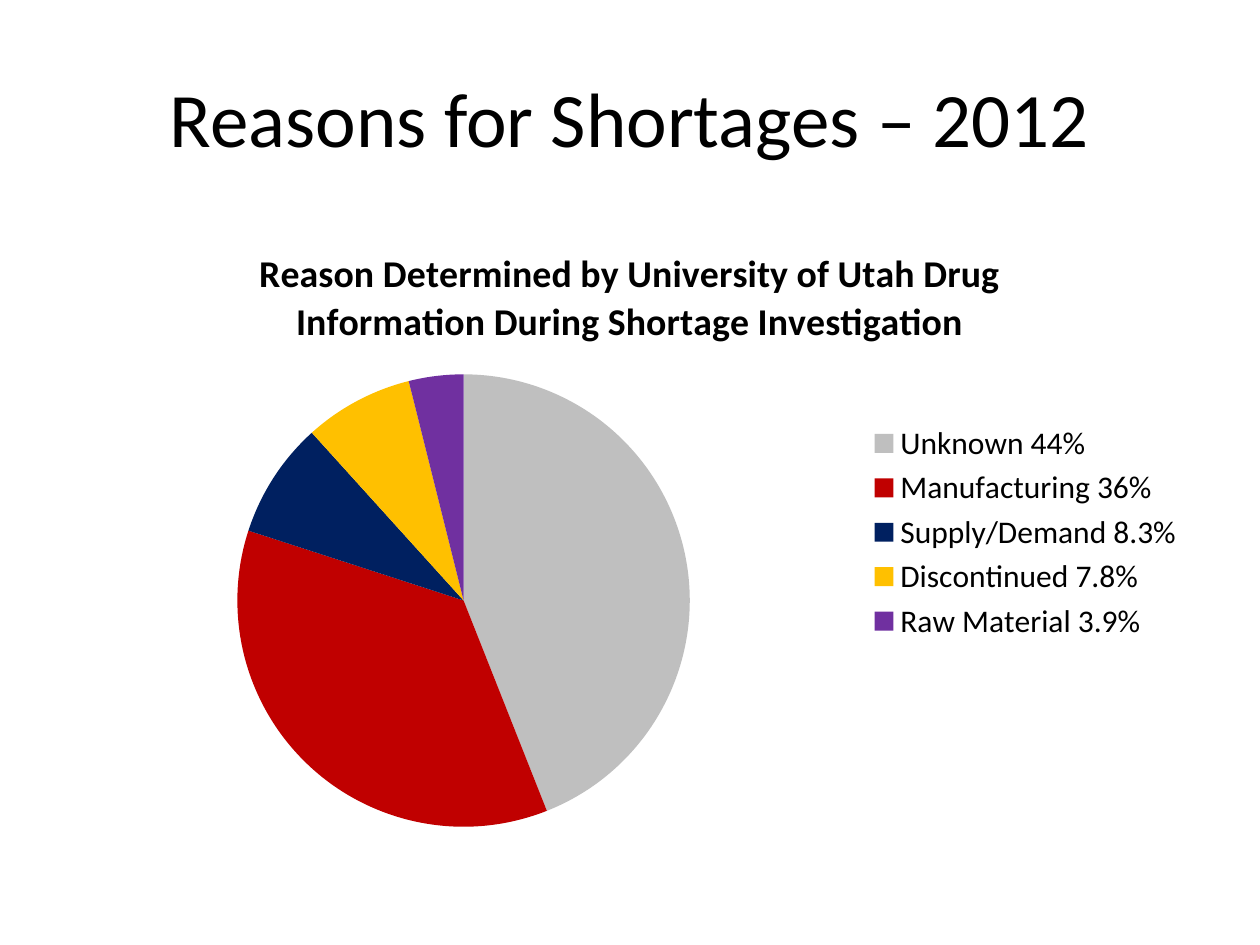
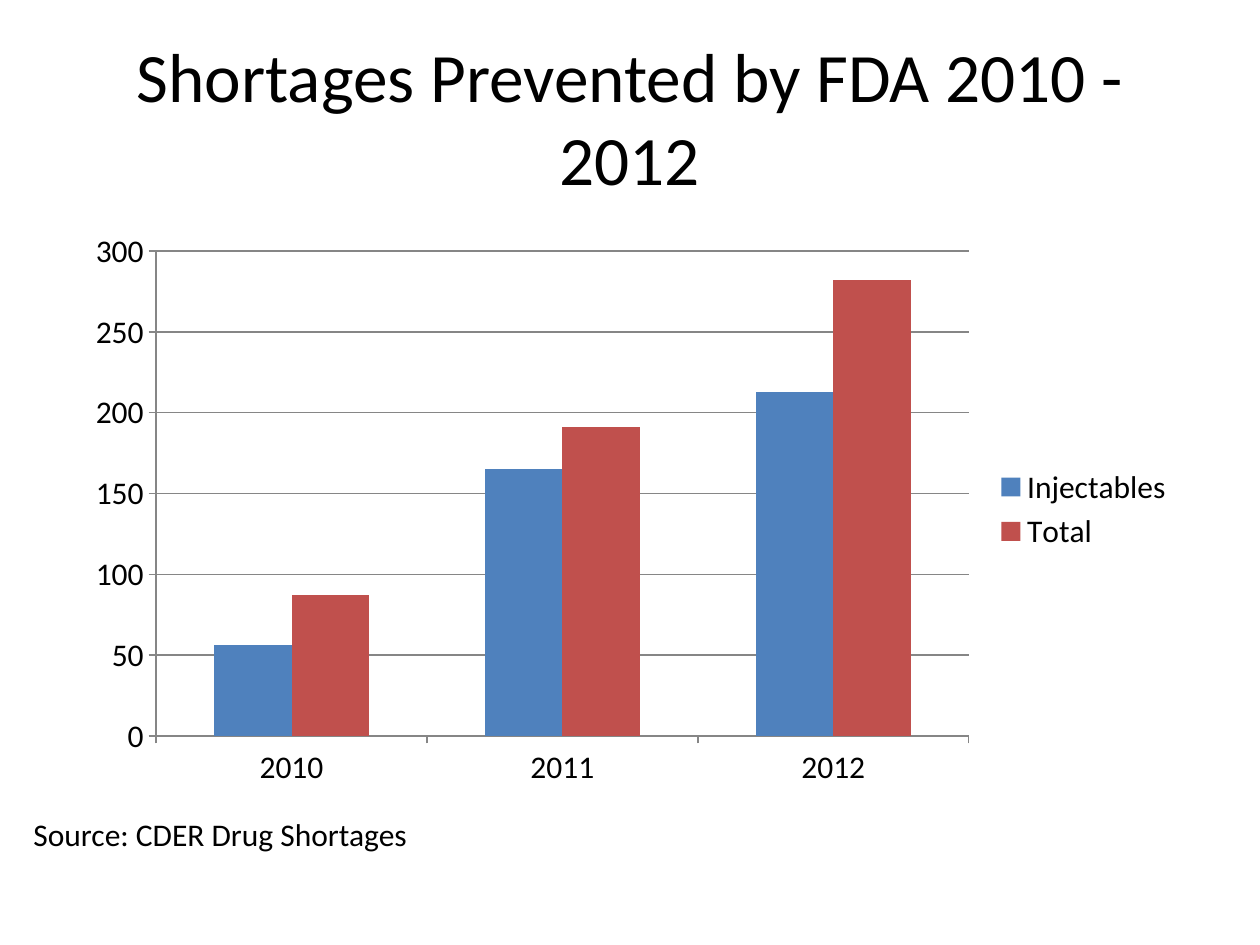
from dataclasses import dataclass

import pptx
import pptx.chart.chart
import pptx.chart.data
import pptx.dml.color
import pptx.dml.fill
import pptx.enum.chart
import pptx.enum.text
import pptx.slide
import pptx.text.text
import pptx.util

Pt = pptx.util.Pt
RGBColor = pptx.dml.color.RGBColor
ChartType = pptx.enum.chart.XL_CHART_TYPE

FONT = "Calibri"
BODY_SIZE = 18
TITLE_ONLY = 5

BLACK = RGBColor(0x00, 0x00, 0x00)
WHITE = RGBColor(0xFF, 0xFF, 0xFF)
AXIS_GREY = RGBColor(0x86, 0x86, 0x86)
SILVER = RGBColor(0xBF, 0xBF, 0xBF)
DARK_RED = RGBColor(0xC0, 0x00, 0x00)
NAVY = RGBColor(0x00, 0x20, 0x60)
AMBER = RGBColor(0xFF, 0xC0, 0x00)
PURPLE = RGBColor(0x70, 0x30, 0xA0)
BLUE = RGBColor(0x4F, 0x81, 0xBD)
BRICK = RGBColor(0xC0, 0x50, 0x4D)


@dataclass(frozen=True)
class Frame:
    """A position and size in points."""
    left: float
    top: float
    width: float
    height: float

    def lengths(self) -> tuple:
        return Pt(self.left), Pt(self.top), Pt(self.width), Pt(self.height)


@dataclass(frozen=True)
class Series:
    name: str
    values: tuple[float, ...]


@dataclass(frozen=True)
class ChartPlan:
    kind: ChartType
    frame: Frame
    categories: tuple[str, ...]
    series: tuple[Series, ...]


TITLE_FRAME = Frame(36, 21.6, 648, 90)
SOURCE_FRAME = Frame(12, 462, 372, 29)

REASONS = ChartPlan(
    ChartType.PIE,
    Frame(36, 126, 648, 356.4),
    ("Unknown 44%", "Manufacturing 36%", "Supply/Demand 8.3%",
     "Discontinued 7.8%", "Raw Material 3.9%"),
    (Series("Series 1", (44, 36, 8.3, 7.8, 3.9)),),
)
REASON_COLOURS = (SILVER, DARK_RED, NAVY, AMBER, PURPLE)

PREVENTED = ChartPlan(
    ChartType.COLUMN_CLUSTERED,
    Frame(42, 126, 636, 330),
    ("2010", "2011", "2012"),
    (Series("Injectables", (56, 165, 213)), Series("Total", (87, 191, 282))),
)
PREVENTED_COLOURS = (BLUE, BRICK)


# Shared text and slide style
def style_font(font: pptx.text.text.Font, size: float, bold: bool = False) -> None:
    font.name = FONT
    font.size = Pt(size)
    font.bold = bold
    font.color.rgb = BLACK


def add_span(para, text: str, size: float, bold: bool = False) -> None:
    span = para.add_run()
    span.text = text
    style_font(span.font, size, bold)


def paint(fill: pptx.dml.fill.FillFormat, colour: RGBColor) -> None:
    fill.solid()
    fill.fore_color.rgb = colour


def add_page(deck, title: str, size: float) -> pptx.slide.Slide:
    page = deck.slides.add_slide(deck.slide_layouts[TITLE_ONLY])
    paint(page.background.fill, WHITE)
    box = page.shapes.title
    box.left, box.top, box.width, box.height = TITLE_FRAME.lengths()
    frame = box.text_frame
    frame.auto_size = pptx.enum.text.MSO_AUTO_SIZE.NONE
    frame.vertical_anchor = pptx.enum.text.MSO_ANCHOR.MIDDLE
    para = frame.paragraphs[0]
    para.alignment = pptx.enum.text.PP_ALIGN.CENTER
    add_span(para, title, size)
    return page


# Shared chart style
def add_chart(page: pptx.slide.Slide, plan: ChartPlan) -> pptx.chart.chart.Chart:
    data = pptx.chart.data.CategoryChartData()
    data.categories = plan.categories
    for series in plan.series:
        data.add_series(series.name, series.values)
    chart = page.shapes.add_chart(plan.kind, *plan.frame.lengths(), data).chart
    style_font(chart.font, BODY_SIZE)
    chart.has_title = False
    chart.has_legend = True
    chart.legend.position = pptx.enum.chart.XL_LEGEND_POSITION.RIGHT
    chart.legend.include_in_layout = False
    style_font(chart.legend.font, BODY_SIZE)
    return chart


def style_line(line) -> None:
    paint(line.fill, AXIS_GREY)
    line.width = Pt(0.75)


# Slide 1: pie of reasons
def build_reasons(deck) -> None:
    page = add_page(deck, "Reasons for Shortages – 2012", 44)
    chart = add_chart(page, REASONS)
    chart.has_title = True
    add_span(
        chart.chart_title.text_frame.paragraphs[0],
        "Reason Determined by University of Utah Drug Information "
        "During Shortage Investigation",
        21.6, bold=True,
    )
    chart.chart_title.include_in_layout = False
    plot = chart.plots[0]
    plot.vary_by_categories = True
    for index, colour in enumerate(REASON_COLOURS):
        paint(plot.series[0].points[index].format.fill, colour)


# Slide 2: columns by year, with the source below
def build_prevented(deck) -> None:
    page = add_page(deck, "Shortages Prevented by FDA 2010 - 2012", 39.6)
    chart = add_chart(page, PREVENTED)
    plot = chart.plots[0]
    plot.vary_by_categories = False
    plot.gap_width = 150
    plot.overlap = 0
    for series, colour in zip(plot.series, PREVENTED_COLOURS):
        paint(series.format.fill, colour)
    for axis in (chart.category_axis, chart.value_axis):
        axis.major_tick_mark = pptx.enum.chart.XL_TICK_MARK.OUTSIDE
        axis.minor_tick_mark = pptx.enum.chart.XL_TICK_MARK.NONE
        style_font(axis.tick_labels.font, BODY_SIZE)
        style_line(axis.format.line)
    values = chart.value_axis
    values.minimum_scale, values.maximum_scale, values.major_unit = 0, 300, 50
    values.has_major_gridlines = True
    style_line(values.major_gridlines.format.line)

    frame = page.shapes.add_textbox(*SOURCE_FRAME.lengths()).text_frame
    frame.word_wrap = True
    frame.auto_size = pptx.enum.text.MSO_AUTO_SIZE.SHAPE_TO_FIT_TEXT
    add_span(frame.paragraphs[0], "Source: CDER Drug Shortages", BODY_SIZE)


def main() -> None:
    deck = pptx.Presentation()
    deck.slide_width, deck.slide_height = Pt(720), Pt(540)
    build_reasons(deck)
    build_prevented(deck)
    deck.save("out.pptx")


if __name__ == "__main__":
    main()
